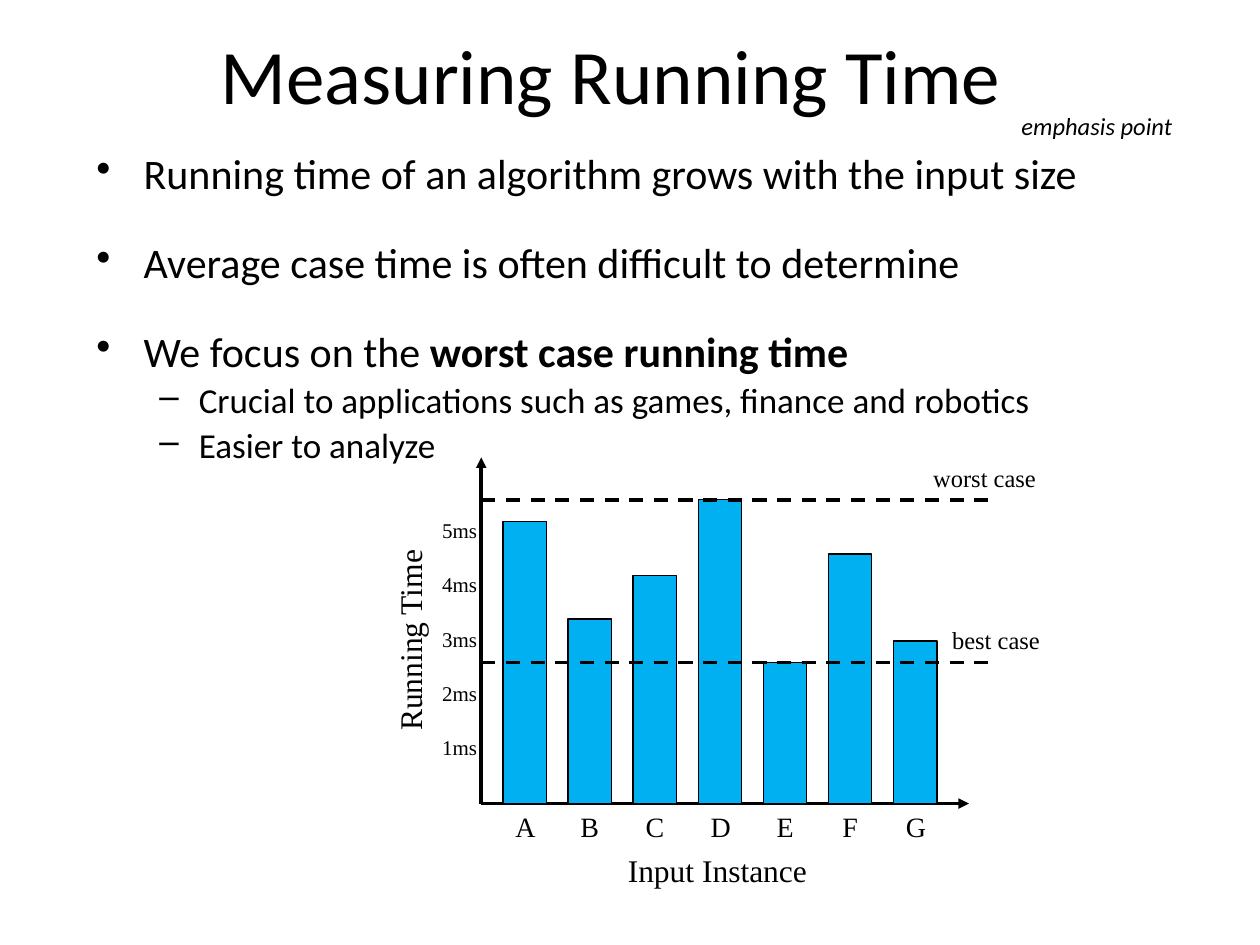
import pptx
import pptx.util
import pptx.dml.color
import pptx.enum.dml
import pptx.enum.shapes
import pptx.enum.text
import pptx.oxml.ns
import pptx.oxml.xmlchemy

Pt = pptx.util.Pt
RGBColor = pptx.dml.color.RGBColor
PP_ALIGN = pptx.enum.text.PP_ALIGN
ANCHOR = pptx.enum.text.MSO_ANCHOR
qn = pptx.oxml.ns.qn
OxmlElement = pptx.oxml.xmlchemy.OxmlElement

BLACK = RGBColor(0, 0, 0)
BLUE = RGBColor(0x00, 0xB0, 0xF0)
SANS = "Calibri"
SERIF = "Times New Roman"

AXIS_X, AXIS_Y = 275, 459.2
BAR_X, BAR_STEP, BAR_W = 287.4, 37.2, 24.8
MS = 31
TIMES = {"A": 5.2, "B": 3.4, "C": 4.2, "D": 5.6, "E": 2.6, "F": 4.6, "G": 3}

BULLETS = [
    (0, 4.8, [("Running time of an algorithm grows with the input size", False)]),
    (0, 25, [("Average case time is often difficult to determine", False)]),
    (0, 25, [("We focus on the ", False), ("worst case running time", True)]),
    (1, 4, [("Crucial to applications such as games, finance and robotics", False)]),
    (1, 4, [("Easier to analyze", False)]),
]
LEVELS = [("•", 27, 27, 24), ("–", 58.5, 22.5, 20)]


class Deck:
    def __init__(self):
        self.prs = pptx.Presentation()
        self.prs.slide_width, self.prs.slide_height = Pt(720), Pt(540)
        self.s = self.prs.slides.add_slide(self.prs.slide_layouts[5])

    def style(self, r, size, font, bold=False, italic=False):
        r.font.size = Pt(size)
        r.font.name = font
        r.font.bold = bold
        r.font.italic = italic
        r.font.color.rgb = BLACK

    def title(self, text, x, y, w, h):
        sp = self.s.shapes.title
        sp.left, sp.top, sp.width, sp.height = Pt(x), Pt(y), Pt(w), Pt(h)
        tf = sp.text_frame
        tf.text = text
        tf.auto_size = pptx.enum.text.MSO_AUTO_SIZE.NONE
        tf.vertical_anchor = ANCHOR.MIDDLE
        tf.paragraphs[0].alignment = PP_ALIGN.CENTER
        self.style(tf.paragraphs[0].runs[0], 44, SANS)

    def text(self, text, x, y, w, h, size, font=SERIF, italic=False,
             align=PP_ALIGN.CENTER, rotation=0):
        sp = self.s.shapes.add_textbox(Pt(x), Pt(y), Pt(w), Pt(h))
        sp.rotation = rotation
        tf = sp.text_frame
        tf.word_wrap = True
        tf.text = text
        p = tf.paragraphs[0]
        p.alignment = align
        self.style(p.runs[0], size, font, italic=italic)

    def bullets(self, items, x, y, w, h):
        sp = self.s.shapes.add_textbox(Pt(x), Pt(y), Pt(w), Pt(h))
        tf = sp.text_frame
        tf.word_wrap = True
        for i, (level, before, runs) in enumerate(items):
            p = tf.add_paragraph() if i else tf.paragraphs[0]
            char, margin, hang, size = LEVELS[level]
            p.level = level
            p.line_spacing = 0.9
            p.space_before = Pt(before)
            pPr = p._p.get_or_add_pPr()
            pPr.set("marL", str(Pt(margin)))
            pPr.set("indent", str(-Pt(hang)))
            bu = OxmlElement("a:buChar")
            bu.set("char", char)
            pPr.append(bu)
            for text, bold in runs:
                r = p.add_run()
                r.text = text
                self.style(r, size, SANS, bold)

    def bar(self, x, y, w, h):
        sp = self.s.shapes.add_shape(
            pptx.enum.shapes.MSO_SHAPE.RECTANGLE, Pt(x), Pt(y), Pt(w), Pt(h))
        sp.shadow.inherit = False
        sp.fill.solid()
        sp.fill.fore_color.rgb = BLUE
        sp.line.color.rgb = BLACK
        sp.line.width = Pt(0.75)

    def line(self, x1, y1, x2, y2, arrow=False, dashed=False):
        sp = self.s.shapes.add_connector(
            pptx.enum.shapes.MSO_CONNECTOR.STRAIGHT, Pt(x1), Pt(y1), Pt(x2), Pt(y2))
        sp.line.color.rgb = BLACK
        sp.line.width = Pt(2)
        if dashed:
            sp.line.dash_style = pptx.enum.dml.MSO_LINE.DASH
        spPr = sp._element.spPr
        if arrow:
            end = OxmlElement("a:tailEnd")
            end.set("type", "triangle")
            spPr.find(qn("a:ln")).append(end)
        spPr.append(OxmlElement("a:effectLst"))


def main():
    d = Deck()
    d.title("Measuring Running Time", 43.2, 12.2, 612, 60)
    d.bullets(BULLETS, 48, 84, 624, 204)

    d.line(AXIS_X, AXIS_Y, AXIS_X, 261.4, arrow=True)
    d.line(AXIS_X, AXIS_Y, 553.7, AXIS_Y, arrow=True)
    for i, (name, time) in enumerate(TIMES.items()):
        x = BAR_X + i * BAR_STEP
        d.bar(x, AXIS_Y - time * MS, BAR_W, time * MS)
        d.text(name, x, AXIS_Y, BAR_W, 27, 16)
    for n in range(1, 6):
        d.text(f"{n}ms", 244, AXIS_Y - n * MS - 12, 37.4, 22.3, 12)
    d.text("Running Time", 171.4, 346.3, 126.7, 30.2, 18,
           align=PP_ALIGN.LEFT, rotation=270)
    d.text("Input Instance", 347, 483, 126, 30.2, 18)

    for name, time, x in (("best case", min(TIMES.values()), 522.7),
                          ("worst case", max(TIMES.values()), 516.2)):
        y = AXIS_Y - time * MS
        d.line(AXIS_X, y, 566, y, dashed=True)
        d.text(name, x, y - 24.8, 92.9, 25.2, 14)
    d.text("emphasis point", 553.7, 59.8, 146.2, 25.2, 14, SANS, italic=True)

    d.prs.save("out.pptx")


if __name__ == "__main__":
    main()
